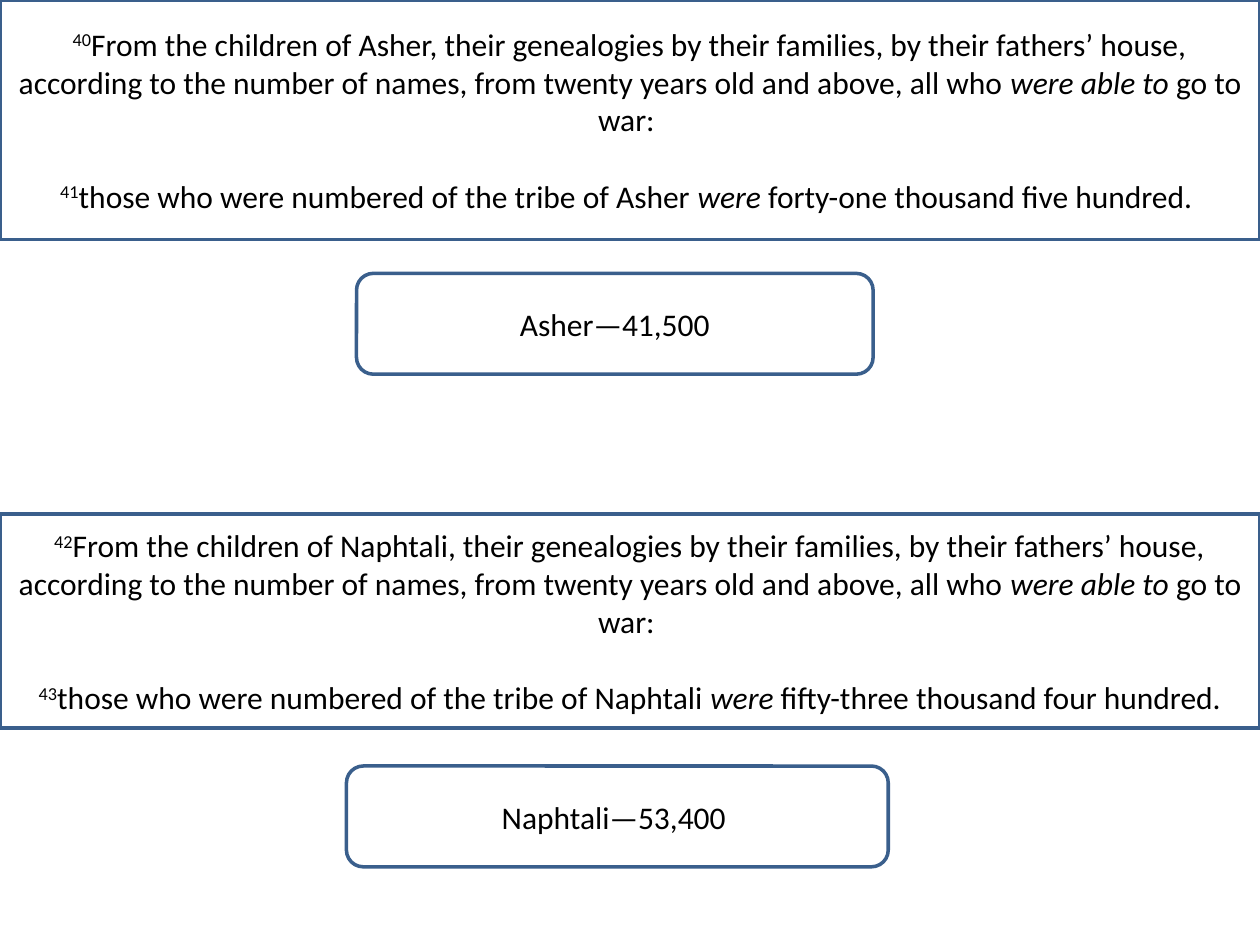
from pptx import Presentation
from pptx.dml.color import RGBColor
from pptx.enum.shapes import MSO_SHAPE
from pptx.enum.text import MSO_ANCHOR, PP_ALIGN
from pptx.util import Inches, Pt

RECT, ROUNDED = MSO_SHAPE.RECTANGLE, MSO_SHAPE.ROUNDED_RECTANGLE
COLORS = {"fill": "FFFFFF", "line": "3A5F8C", "text": "000000"}
FONT, SIZE, VERSE_GAP = "Calibri", Pt(18), Pt(22)
SLIDE_W, SLIDE_H = 10, 7.5
TOTAL_H = 0.8

# Tops, heights and total widths in inches
TRIBES = [
    {"name": "Asher", "verses": (40, 41), "count": "forty-one thousand five hundred. ",
     "total": "Asher—41,500", "top": 0, "height": 1.9,
     "total_box": (2.83, 2.17, 4.1)},
    {"name": "Naphtali", "verses": (42, 43), "count": "fifty-three thousand four hundred.",
     "total": "Naphtali—53,400 ", "top": 4.08, "height": 1.7,
     "total_box": (2.75, 6.08, 4.3)},
]


def verse_paragraphs(tribe):
    """Return each verse as (text, style) runs."""
    first, second = tribe["verses"]
    name = tribe["name"]
    return [
        [(str(first), "number"),
         (f"From the children of {name}, their genealogies by their families, "
          "by their fathers’ house, according to the number of names, "
          "from twenty years old and above, all who ", ""),
         ("were able to", "italic"), (" go to war: ", "")],
        [(str(second), "number"),
         (f"those who were numbered of the tribe of {name} ", ""),
         ("were", "italic"), (f" {tribe['count']}", "")],
    ]


def add_box(s, kind, box, paragraphs):
    sp = s.shapes.add_shape(kind, *map(Inches, box))
    sp.shadow.inherit = False
    sp.fill.solid()
    sp.fill.fore_color.rgb = RGBColor.from_string(COLORS["fill"])
    sp.line.color.rgb = RGBColor.from_string(COLORS["line"])
    sp.line.width = Pt(2)
    tf = sp.text_frame
    tf.word_wrap = True
    tf.vertical_anchor = MSO_ANCHOR.MIDDLE
    for i, runs in enumerate(paragraphs):
        p = tf.add_paragraph() if i else tf.paragraphs[0]
        p.alignment = PP_ALIGN.CENTER
        if i:
            p.space_before = VERSE_GAP
        for text, style in runs:
            r = p.add_run()
            r.text = text
            r.font.name, r.font.size = FONT, SIZE
            r.font.color.rgb = RGBColor.from_string(COLORS["text"])
            if style == "italic":
                r.font.italic = True
            elif style == "number":
                r.font._element.set("baseline", "30000")


prs = Presentation()
prs.slide_width, prs.slide_height = Inches(SLIDE_W), Inches(SLIDE_H)
s = prs.slides.add_slide(prs.slide_layouts[6])
for tribe in TRIBES:
    add_box(s, RECT, (0, tribe["top"], SLIDE_W, tribe["height"]), verse_paragraphs(tribe))
for tribe in TRIBES:
    add_box(s, ROUNDED, (*tribe["total_box"], TOTAL_H), [[(tribe["total"], "")]])
prs.save("out.pptx")
